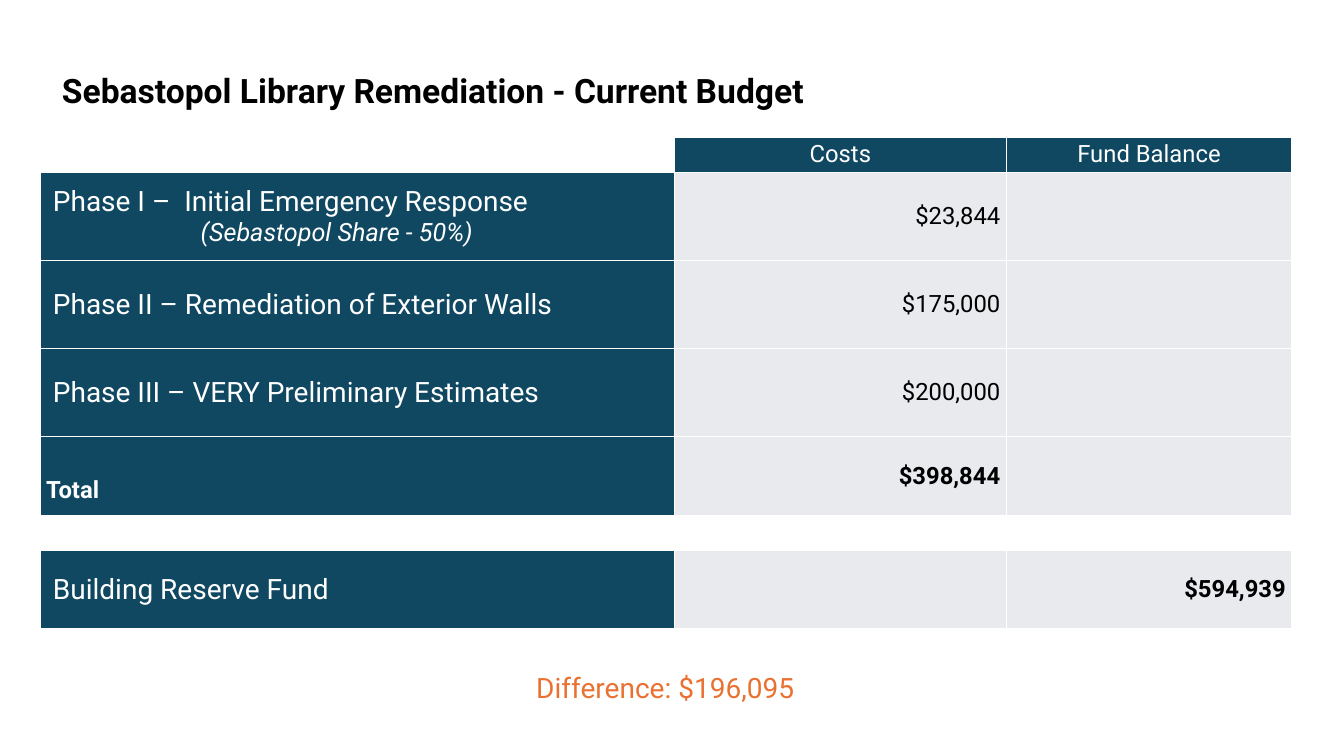
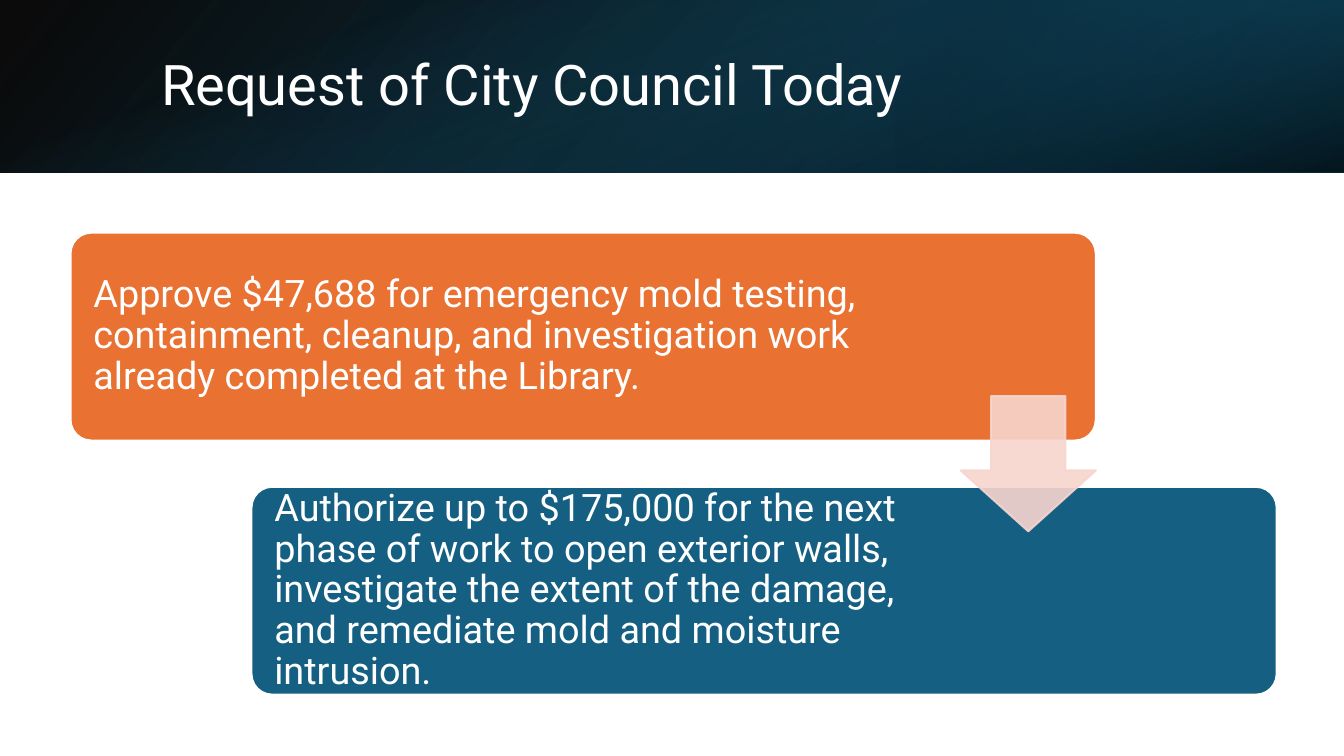
from pptx import Presentation
from pptx.dml.color import RGBColor
from pptx.enum.shapes import MSO_SHAPE
from pptx.enum.text import MSO_ANCHOR, PP_ALIGN
from pptx.oxml import parse_xml
from pptx.oxml.ns import qn
from pptx.util import Emu, Pt
from lxml import etree

# The slide is a grid of 160 columns by 90 rows of square units
UNIT = 76200
COLS, ROWS = 160, 90
FONT = "Roboto"
NS = 'xmlns:a="http://schemas.openxmlformats.org/drawingml/2006/main"'
C = {"white": "FFFFFF", "black": "000000", "navy": "104862", "deep": "0B3041",
     "blue": "156082", "orange": "E97132", "gray": "E8EAED", "pink": "F7D5CE"}


def u(n):
    return Emu(round(n * UNIT))


def rgb(name):
    return RGBColor.from_string(C[name])


def add_run(p, text, size, color, bold=False, italic=False):
    r = p.add_run()
    r.text = text
    r.font.name, r.font.size = FONT, Pt(size)
    r.font.bold, r.font.italic = bold, italic
    r.font.color.rgb = rgb(color)


def add_text(s, box, text, size, color, bold=False, align=PP_ALIGN.LEFT,
             anchor=MSO_ANCHOR.TOP, spacing=None):
    tf = s.shapes.add_textbox(*map(u, box)).text_frame
    tf.word_wrap = True
    tf.vertical_anchor = anchor
    p = tf.paragraphs[0]
    p.alignment, p.line_spacing = align, spacing
    add_run(p, text, size, color, bold)


def add_panel(s, kind, box, fill=None, line=None):
    sp = s.shapes.add_shape(kind, *map(u, box))
    sp.shadow.inherit = False
    if fill:
        sp.fill.solid()
        sp.fill.fore_color.rgb = rgb(fill)
    if line:
        sp.line.color.rgb = rgb(line)
        sp.line.width = Pt(1.5)
    else:
        sp.line.fill.background()
    return sp


def set_alpha(fill_owner, percent):
    for color in fill_owner.iter(qn("a:srgbClr")):
        etree.SubElement(color, qn("a:alpha")).set("val", str(percent * 1000))


def add_gradient(s, box, stops, angle, rotation=0, flip=False):
    sp = add_panel(s, MSO_SHAPE.RECTANGLE, box)
    sp.rotation = rotation
    xfrm = sp._element.spPr.find(qn("a:xfrm"))
    if flip:
        xfrm.set("flipH", "1")
    marks = "".join(
        f'<a:gs pos="{pos * 1000}"><a:srgbClr val="{C[color]}">'
        f'<a:alpha val="{alpha * 1000}"/></a:srgbClr></a:gs>'
        for pos, color, alpha in stops)
    grad = parse_xml(f'<a:gradFill {NS} rotWithShape="1"><a:gsLst>{marks}</a:gsLst>'
                     f'<a:lin ang="{angle * 60000}" scaled="0"/></a:gradFill>')
    sp._element.spPr.find(qn("a:prstGeom")).addnext(grad)


def style_cell(cell, fill):
    cell.fill.solid()
    cell.fill.fore_color.rgb = rgb(fill)
    cell.vertical_anchor = MSO_ANCHOR.MIDDLE
    cell.margin_left = cell.margin_right = cell.margin_top = cell.margin_bottom = 0
    tcPr = cell._tc.get_or_add_tcPr()
    for i, side in enumerate("LRTB"):
        tcPr.insert(i, parse_xml(
            f'<a:ln{side} {NS} w="12700"><a:solidFill><a:srgbClr val="{C["white"]}"/>'
            f'</a:solidFill></a:ln{side}>'))


def budget_table(s, box):
    x, y, w, h = box
    col_parts = (75.5, 39.5, 34)
    # label, note, cost, balance, height share
    rows = [
        ("", "", "Costs", "Fund Balance", 4.2),
        ("Phase I –  Initial Emergency Response", "(Sebastopol Share - 50%)",
         "$23,844", "", 10.5),
        ("Phase II – Remediation of Exterior Walls", "", "$175,000", "", 10.5),
        ("Phase III – VERY Preliminary Estimates", "", "$200,000", "", 10.5),
        ("Total", "", "$398,844", "", 9.4),
        ("", "", "", "", 4.1),
        ("Building Reserve Fund", "", "", "$594,939", 9.4),
    ]
    row_sum = sum(row[-1] for row in rows)
    table = s.shapes.add_table(len(rows), len(col_parts), *map(u, box)).table
    table.first_row = table.horz_banding = False
    for col, part in zip(table.columns, col_parts):
        col.width = u(w * part / sum(col_parts))

    for i, (label, note, *amounts, part) in enumerate(rows):
        table.rows[i].height = u(h * part / row_sum)
        header, total = i == 0, label == "Total"
        spacer = not (label or any(amounts))

        # Row label
        cell = table.cell(i, 0)
        style_cell(cell, "navy" if label else "white")
        p = cell.text_frame.paragraphs[0]
        if label:
            cell.margin_left = u(0.7 if total else 1.5)
            cell.margin_top = u(3.4 if total else 0)
            add_run(p, label, 17 if total else 20, "white", bold=total)
        if note:
            p = cell.text_frame.add_paragraph()
            p._p.get_or_add_pPr().set("marL", str(u(17.6)))
            add_run(p, note, 18, "white", italic=True)

        # Amounts
        for j, amount in enumerate(amounts, 1):
            cell = table.cell(i, j)
            style_cell(cell, "navy" if header else "white" if spacer else "gray")
            if not amount:
                continue
            p = cell.text_frame.paragraphs[0]
            p.alignment = PP_ALIGN.CENTER if header else PP_ALIGN.RIGHT
            cell.margin_right = u(0 if header else 0.7)
            add_run(p, amount, 17, "white" if header else "black",
                    bold=total or j == 2 and not header)


def title_band(s, box, title):
    x, y, w, h = box
    add_gradient(s, box, [(0, "black", 96), (100, "navy", 100)], 140, flip=True)
    add_gradient(s, (x + w * 2 / 3, y, w / 3, h),
                 [(19, "deep", 68), (100, "blue", 79)], 320, rotation=180, flip=True)
    # Upright rectangle turned onto the band
    add_gradient(s, (x + (w - h) / 2, y + (h - w) / 2, h, w),
                 [(23, "blue", 0), (99, "black", 74)], 340, rotation=90)
    add_text(s, (x + 18, y + 4.6, w - 28, 11.5), title, 40, "white",
             anchor=MSO_ANCHOR.MIDDLE, spacing=0.9)


def step_flow(s, box, steps):
    x, y, w, h = box
    card_w, card_h = w * 0.85, h * 0.45
    for i, (text, fill, right_inset) in enumerate(steps):
        card = (x + i * (w - card_w), y + i * (h - card_h), card_w, card_h)
        sp = add_panel(s, MSO_SHAPE.ROUNDED_RECTANGLE, card, fill, "white")
        sp.adjustments[0] = 0.1
        tf = sp.text_frame
        tf.word_wrap = True
        tf.vertical_anchor = MSO_ANCHOR.MIDDLE
        tf.margin_left, tf.margin_right = u(2), u(right_inset)
        tf.margin_top = tf.margin_bottom = 0
        p = tf.paragraphs[0]
        p.alignment, p.line_spacing = PP_ALIGN.LEFT, 0.9
        add_run(p, text, 27, "white")

    # Arrow across the gap, flush with the first card's right side
    side = card_h * 0.65
    arrow = add_panel(s, MSO_SHAPE.DOWN_ARROW,
                      (x + card_w - side, y + (h - side) / 2, side, side), "pink", "pink")
    arrow.adjustments[0], arrow.adjustments[1] = 0.55, 0.45
    set_alpha(arrow._element.spPr, 90)


def budget_slide(s):
    add_text(s, (31.4, 79.2, 95.6, 5.3), "Difference: $196,095", 20, "orange",
             align=PP_ALIGN.CENTER)
    budget_table(s, (4.8, 16.3, 149, 58.6))
    add_text(s, (6.2, 7.7, 140, 6), "Sebastopol Library Remediation - Current Budget",
             24, "black", bold=True)


def request_slide(s):
    title_band(s, (0, 0, COLS, 20.6), "Request of City Council Today")
    step_flow(s, (8.4, 27.7, 143.6, 55), [
        ("Approve $47,688 for emergency mold testing, containment, cleanup, and "
         "investigation work already completed at the Library.", "orange", 26.4),
        ("Authorize up to $175,000 for the next phase of work to open exterior walls, "
         "investigate the extent of the damage, and remediate mold and moisture "
         "intrusion.", "blue", 39.8),
    ])


def main():
    prs = Presentation()
    prs.slide_width, prs.slide_height = u(COLS), u(ROWS)
    for build in (budget_slide, request_slide):
        build(prs.slides.add_slide(prs.slide_layouts[6]))
    prs.save("out.pptx")


if __name__ == "__main__":
    main()
